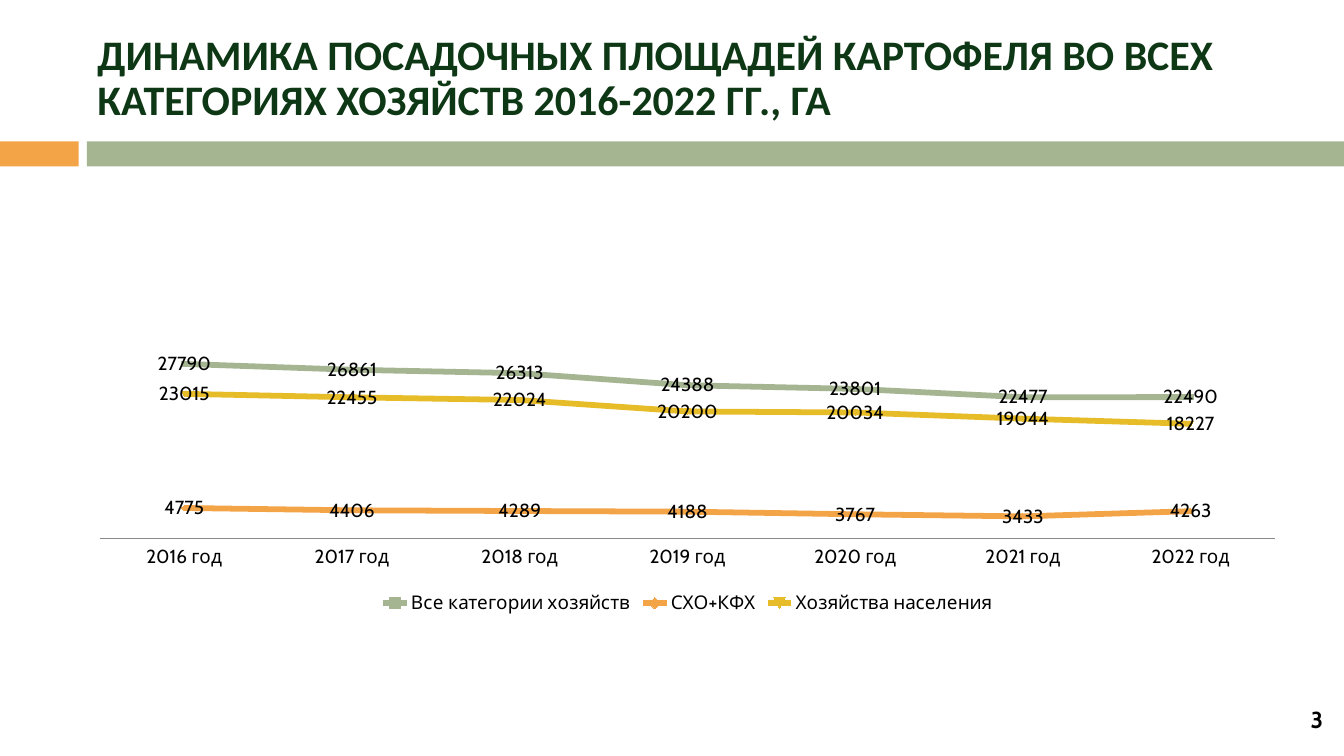
"""Build a slide with a line chart of potato planting areas."""
from dataclasses import dataclass

from lxml import etree
from pptx import Presentation
from pptx.chart.data import CategoryChartData
from pptx.dml.color import RGBColor
from pptx.enum.chart import (XL_CHART_TYPE, XL_LABEL_POSITION,
                             XL_LEGEND_POSITION, XL_TICK_LABEL_POSITION,
                             XL_TICK_MARK)
from pptx.enum.shapes import MSO_SHAPE
from pptx.enum.text import MSO_ANCHOR, MSO_AUTO_SIZE, PP_ALIGN
from pptx.util import Cm, Pt

LINE = XL_CHART_TYPE.LINE
CENTER = XL_LABEL_POSITION.CENTER
BOTTOM = XL_LEGEND_POSITION.BOTTOM
LOW = XL_TICK_LABEL_POSITION.LOW
NO_TICK = XL_TICK_MARK.NONE
RECT = MSO_SHAPE.RECTANGLE
MIDDLE = MSO_ANCHOR.MIDDLE
NO_FIT = MSO_AUTO_SIZE.NONE
LEFT, RIGHT = PP_ALIGN.LEFT, PP_ALIGN.RIGHT
CHART_NS = "http://schemas.openxmlformats.org/drawingml/2006/chart"


@dataclass(frozen=True)
class Theme:
    """Colours, fonts and type sizes."""
    green: str = "A5B592"
    orange: str = "F3A447"
    yellow: str = "E7BC29"
    dark: str = "0E3815"
    black: str = "000000"
    grey: str = "898989"
    head_font: str = "Calibri"
    font: str = "Cabin"
    head_size: int = 40
    chart_size: int = 18
    page_size: int = 22


@dataclass(frozen=True)
class Box:
    """Place and size in centimetres."""
    left: float
    top: float
    width: float
    height: float

    def lengths(self) -> tuple:
        """Return the four lengths for python-pptx."""
        return Cm(self.left), Cm(self.top), Cm(self.width), Cm(self.height)


@dataclass(frozen=True)
class Band:
    """A coloured bar under the title."""
    box: Box
    color: str


@dataclass(frozen=True)
class Series:
    """One line of the chart."""
    name: str
    color: str
    values: tuple


THEME = Theme()
WIDTH, HEIGHT = 45.16, 25.4
BANDS = (
    Band(Box(0, 4.75, 2.64, 0.84), THEME.orange),
    Band(Box(2.92, 4.75, WIDTH - 2.92, 0.84), THEME.green),
)
YEARS = [f"{year} год" for year in range(2016, 2023)]
SERIES = (
    Series("Все категории хозяйств", THEME.green,
           (27790, 26861, 26313, 24388, 23801, 22477, 22490)),
    Series("СХО+КФХ", THEME.orange,
           (4775, 4406, 4289, 4188, 3767, 3433, 4263)),
    Series("Хозяйства населения", THEME.yellow,
           (23015, 22455, 22024, 20200, 20034, 19044, 18227)),
)
PLOT = {"x": 0.01, "y": 0.35, "w": 0.98, "h": 0.455}
TITLE = ("ДИНАМИКА ПОСАДОЧНЫХ ПЛОЩАДЕЙ КАРТОФЕЛЯ ВО ВСЕХ "
         "КАТЕГОРИЯХ ХОЗЯЙСТВ 2016-2022 ГГ., ГА")


def style_font(font, name: str, size: int, color: str, bold: bool) -> None:
    """Set the face, size, colour and weight of a font."""
    font.name, font.size, font.bold = name, Pt(size), bold
    font.color.rgb = RGBColor.from_string(color)


def write(shape, text: str, align, name: str, size: int, color: str):
    """Put one bold paragraph in a shape and return its frame."""
    frame = shape.text_frame
    frame.text = text
    frame.word_wrap, frame.auto_size = True, NO_FIT
    frame.vertical_anchor = MIDDLE
    line = frame.paragraphs[0]
    line.alignment = align
    style_font(line.runs[0].font, name, size, color, True)
    return frame


def add_band(slide, band: Band) -> None:
    """Draw a plain coloured bar."""
    shape = slide.shapes.add_shape(RECT, *band.box.lengths())
    shape.shadow.inherit = False
    shape.fill.solid()
    shape.fill.fore_color.rgb = RGBColor.from_string(band.color)
    shape.line.fill.background()


def add_title(slide, text: str, box: Box) -> None:
    """Move, fill and format the title placeholder."""
    title = slide.shapes.title
    title.left, title.top, title.width, title.height = box.lengths()
    frame = write(title, text, LEFT, THEME.head_font, THEME.head_size,
                  THEME.dark)
    frame.paragraphs[0].line_spacing = 0.9


def add_page(slide, text: str, box: Box) -> None:
    """Write the page number."""
    shape = slide.shapes.add_textbox(*box.lengths())
    frame = write(shape, text, RIGHT, THEME.font, THEME.page_size,
                  THEME.black)
    frame.margin_left = frame.margin_right = Cm(0.4)
    frame.margin_top = frame.margin_bottom = Cm(0.2)


def place_plot(chart) -> None:
    """Fix the inner plot area by fractions of the chart."""
    def tag(name: str) -> str:
        return f"{{{CHART_NS}}}{name}"

    area = next(chart.element.iter(tag("plotArea")))
    for old in area.findall(tag("layout")):
        area.remove(old)
    layout = etree.Element(tag("layout"))
    area.insert(0, layout)
    manual = etree.SubElement(layout, tag("manualLayout"))
    parts = {"layoutTarget": "inner", "xMode": "edge", "yMode": "edge", **PLOT}
    for name, value in parts.items():
        etree.SubElement(manual, tag(name)).set("val", str(value))


def add_lines(slide, rows: tuple[Series, ...], box: Box) -> None:
    """Draw the line chart with value labels and a legend."""
    data = CategoryChartData(number_format="General")
    data.categories = YEARS
    for row in rows:
        data.add_series(row.name, row.values)
    chart = slide.shapes.add_chart(LINE, *box.lengths(), data).chart
    style_font(chart.font, THEME.font, THEME.chart_size, THEME.black, False)
    chart.has_title = False
    chart.has_legend = True
    chart.legend.position = BOTTOM
    chart.legend.include_in_layout = False
    chart.plots[0].vary_by_categories = False

    scale = chart.value_axis
    scale.minimum_scale, scale.maximum_scale = 0, 30000
    scale.has_major_gridlines = False
    scale.visible = False
    axis = chart.category_axis
    axis.major_tick_mark = axis.minor_tick_mark = NO_TICK
    axis.tick_label_position = LOW
    axis.format.line.width = Pt(0.75)
    axis.format.line.color.rgb = RGBColor.from_string(THEME.grey)

    for row, line in zip(rows, chart.plots[0].series):
        line.smooth = False
        line.marker.style = None
        line.format.line.width = Pt(5.5)
        line.format.line.color.rgb = RGBColor.from_string(row.color)
        labels = line.data_labels
        labels.show_value = True
        labels.position = CENTER
    place_plot(chart)


def main() -> None:
    """Build and save the slide."""
    deck = Presentation()
    deck.slide_width, deck.slide_height = Cm(WIDTH), Cm(HEIGHT)
    slide = deck.slides.add_slide(deck.slide_layouts[5])
    for band in BANDS:
        add_band(slide, band)
    add_lines(slide, SERIES, Box(2.97, 6.91, 40.26, 13.87))
    add_title(slide, TITLE, Box(3.02, 0.84, 40.26, 3.66))
    add_page(slide, "3", Box(31.98, 23.5, 12.88, 1.35))
    deck.save("out.pptx")


if __name__ == "__main__":
    main()
